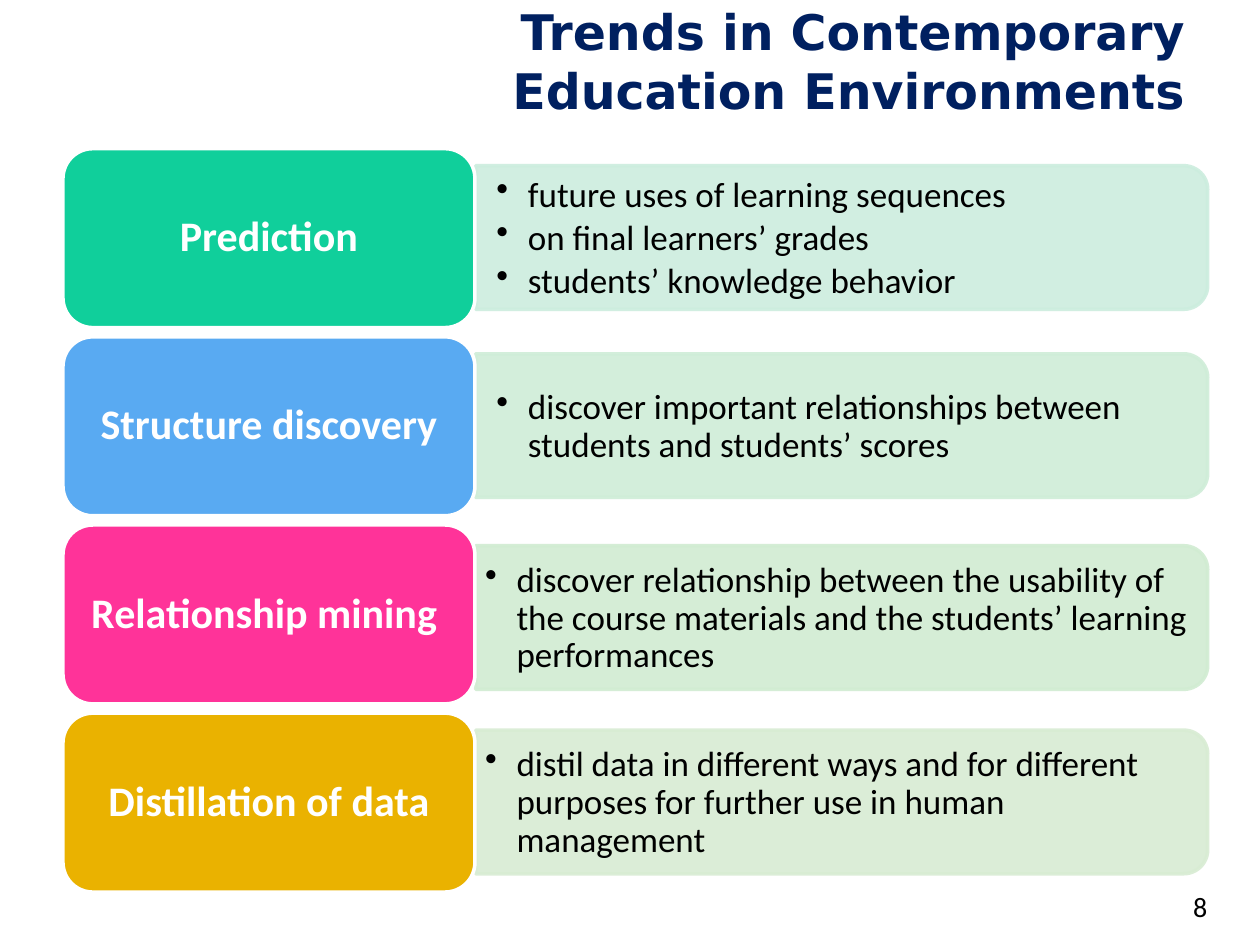
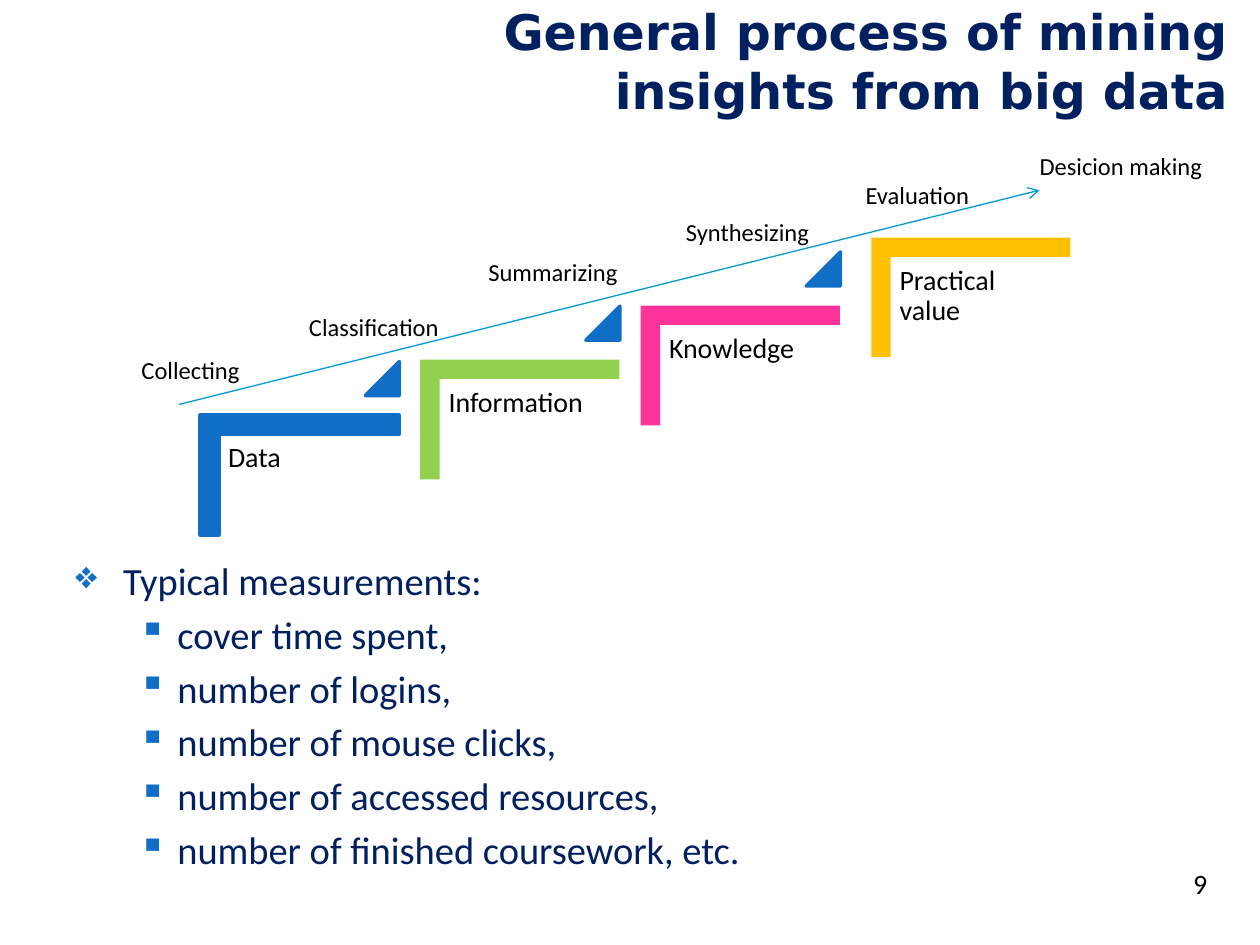
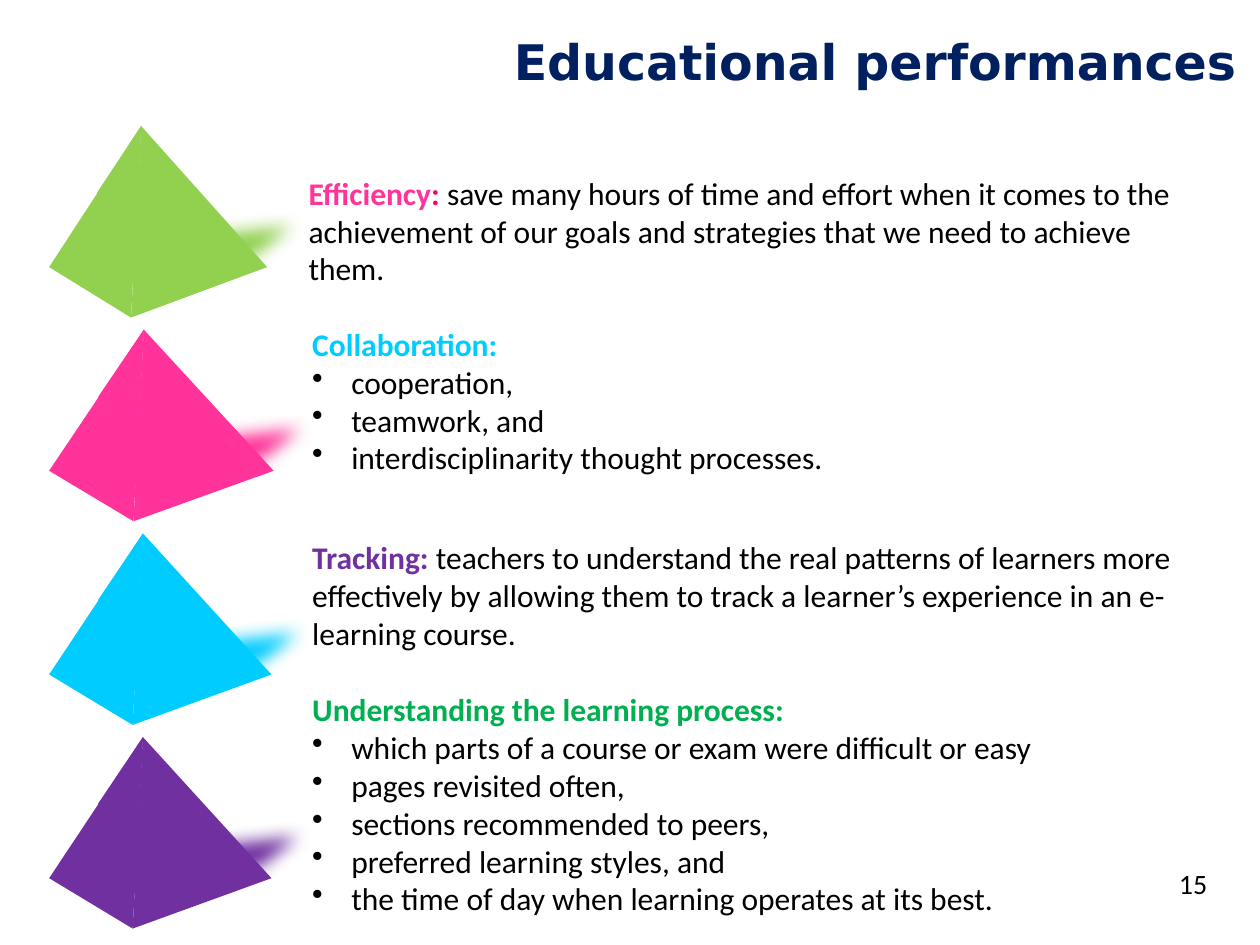
from pptx import Presentation
from pptx import util as u
from pptx.dml.color import RGBColor
from pptx.enum import shapes, text
from pptx.oxml import ns, xmlchemy

NAVY = RGBColor(0x00, 0x20, 0x60)
BLACK = RGBColor(0x00, 0x00, 0x00)
WHITE = RGBColor(0xFF, 0xFF, 0xFF)
BLUE = RGBColor(0x0F, 0x6F, 0xC6)
ROUTE = RGBColor(0x00, 0x9A, 0xD4)
MINT = RGBColor(0x10, 0xCF, 0x9B)
SKY = RGBColor(0x59, 0xAA, 0xF2)
PINK = RGBColor(0xFF, 0x33, 0x99)
ROSE = RGBColor(0xFF, 0x00, 0x66)
OCHRE = RGBColor(0xEA, 0xB2, 0x00)
AMBER = RGBColor(0xFF, 0xC0, 0x00)
LIME = RGBColor(0x92, 0xD0, 0x50)
CYAN = RGBColor(0x00, 0xCC, 0xFF)
VIOLET = RGBColor(0x70, 0x30, 0xA0)
GREEN = RGBColor(0x00, 0xB0, 0x50)
PALE = [RGBColor(0xCC, 0xED, 0xDE), RGBColor(0xCF, 0xED, 0xD8),
        RGBColor(0xD1, 0xEC, 0xD2), RGBColor(0xD8, 0xEC, 0xD3)]
BODY, HEAD = "Calibri", "DejaVu Sans"
LEFT, MID, RIGHT = text.PP_ALIGN.LEFT, text.PP_ALIGN.CENTER, text.PP_ALIGN.RIGHT
KIND = shapes.MSO_SHAPE

TRENDS = [
    ("Prediction", MINT, 0, (0.17, 0.08),
     ["future uses of learning sequences", "on final learners’ grades",
      "students’ knowledge behavior"]),
    ("Structure discovery", SKY, 0, (0.17, 0.08),
     ["discover important relationships between students and students’ scores"]),
    ("Relationship mining ", PINK, 0.03, (0.08, 0.04),
     ["discover relationship between the usability of the course materials "
      "and the students’ learning performances"]),
    ("Distillation of data", OCHRE, 0, (0.08, 0.04),
     ["distil data in different ways and for different purposes for further "
      "use in human management"]),
]

STEPS = [("Data", BLUE, 1.9, 2.98), ("Information", LIME, 3.65, 2.54),
         ("Knowledge", PINK, 5.4, 2.11), ("Practical value", AMBER, 7.23, 1.57)]
STAGES = [("Collecting", 1.01, 2.77, 0.99), ("Classification", 2.33, 2.43, 1.25),
          ("Summarizing", 3.77, 1.99, 1.23), ("Synthesizing", 5.33, 1.67, 1.19),
          ("Evaluation", 6.75, 1.38, 1.04), ("Desicion making", 8.14, 1.15, 1.5)]
MEASURES = ["cover time spent,", "number of logins,", "number of mouse clicks,",
            "number of accessed resources,", "number of finished coursework, etc."]

PYRAMIDS = [(LIME, 1), (PINK, 1.03), (CYAN, 1.02), (VIOLET, 1.02)]
SHADE = [(2.49, 0.58), (1.77, 1.17), (0.94, 1.3), (0.5, 0.79)]
FACES = [
    [(0.73, 0), (0.65, 1.52), (0, 1.12)],
    [(0.73, 0), (1.73, 1.12), (0.65, 1.52)],
    [(0.73, 0), (0.67, 1.28), (0.62, 0.96), (0.52, 0.72), (0.38, 0.53)],
]
GAINS = [
    ((2.35, 1.33, 7.21, 1.01),
     [("Efficiency", PINK, True), (": ", ROSE, True),
      ("save many hours of time and effort when it comes to the achievement of "
       "our goals and strategies that we need to achieve them.", BLACK, False)], []),
    ((2.38, 2.53, 7.33, 1.31), [("Collaboration:", CYAN, True)],
     ["cooperation,", "teamwork, and", "interdisciplinarity thought processes."]),
    ((2.38, 4.22, 7.43, 1.01),
     [("Tracking: ", VIOLET, True),
      ("teachers to understand the real patterns of learners more effectively by "
       "allowing them to track a learner’s experience in an e-learning course.",
       BLACK, False)], []),
    ((2.38, 5.43, 7.43, 1.92), [("Understanding the learning process:", GREEN, True)],
     ["which parts of a course or exam were difficult or easy",
      "pages revisited often,", "sections recommended to peers,",
      "preferred learning styles, and",
      "the time of day when learning operates at its best."]),
]


def inch(nums):
    return [u.Inches(n) for n in nums]


def child(node, tag, **attrs):
    new = xmlchemy.OxmlElement(tag)
    for key, value in attrs.items():
        new.set(key, str(value))
    node.append(new)
    return new


def write(par, words, size, color=BLACK, bold=False, font=BODY):
    run = par.add_run()
    run.text = words
    run.font.name, run.font.size, run.font.bold = font, u.Pt(size), bold
    run.font.color.rgb = color


def line(frame, align=LEFT):
    first = frame.paragraphs[0]
    par = frame.add_paragraph() if first.runs else first
    par.alignment = align
    return par


def bullet(par, mark, edge, hang, color=None):
    props = par._p.get_or_add_pPr()
    props.set("marL", str(u.Inches(edge)))
    props.set("indent", str(-u.Inches(hang)))
    if color is not None:
        child(child(props, "a:buClr"), "a:srgbClr", val=color)
    child(props, "a:buChar", char=mark)


def inset(frame, across, down):
    frame.margin_left = frame.margin_right = u.Inches(across)
    frame.margin_top = frame.margin_bottom = u.Inches(down)


def box(slide, at, wrap=True):
    frame = slide.shapes.add_textbox(*inch(at)).text_frame
    frame.word_wrap = wrap
    return frame


def label(slide, at, words, size):
    write(line(box(slide, at, False), RIGHT), words, size)


def paint(shape, color, edge=None):
    shape.shadow.inherit = False
    shape.fill.solid()
    shape.fill.fore_color.rgb = color
    if edge is None:
        shape.line.fill.background()
    else:
        shape.line.color.rgb = edge
        shape.line.width = u.Pt(2)
    return shape


def form(slide, kind, at, color, edge=None):
    return paint(slide.shapes.add_shape(kind, *inch(at)), color, edge)


def corner(slide, at, color, edge):
    shape = form(slide, KIND.RECTANGLE, at, color, edge)
    geom = shape._element.spPr.find(ns.qn("a:prstGeom"))
    geom.set("prst", "corner")
    guides = geom.find(ns.qn("a:avLst"))
    for name in ("adj1", "adj2"):
        child(guides, "a:gd", name=name, fmla="val 16100")
    shape.rotation = 90


def outline(slide, points, color):
    start, *rest = [inch(p) for p in points]
    pen = slide.shapes.build_freeform(*start)
    pen.add_line_segments(rest, close=True)
    return paint(pen.convert_to_shape(), color)


def begin(deck, words, left, width, page, at):
    slide = deck.slides.add_slide(deck.slide_layouts[5])
    title = slide.shapes.title
    title.left, title.top, title.width, title.height = inch((left, 0.17, width, 0.62))
    frame = title.text_frame
    frame.auto_size = text.MSO_AUTO_SIZE.NONE
    frame.vertical_anchor = text.MSO_ANCHOR.MIDDLE
    write(line(frame, RIGHT), words, 28, NAVY, True, HEAD)
    label(slide, at, page, 16)
    return slide


def trends(deck):
    slide = begin(deck, "Trends in Contemporary Education Environments",
                  2.08, 7.42, "8", (9.36, 7.01, 0.32, 0.37))
    for i, (name, color, shift, pad, notes) in enumerate(TRENDS):
        top = 1.18 + i * 4.48 / 3
        mid = top + 0.71 + shift
        panel = form(slide, KIND.ROUND_2_SAME_RECTANGLE,
                     (6.11, mid - 2.91, 1.14, 5.81), PALE[i], PALE[i])
        panel.rotation = 90
        for tint in panel._element.spPr.iter(ns.qn("a:srgbClr")):
            child(tint, "a:alpha", val=90000)
        frame = box(slide, (3.77, mid - 0.51, 5.76, 1.03))
        frame.vertical_anchor = text.MSO_ANCHOR.MIDDLE
        inset(frame, *pad)
        for note in notes:
            par = line(frame)
            bullet(par, "•", 0.25, 0.25)
            par.line_spacing, par.space_after = 0.9, u.Pt(3)
            write(par, note, 20)
        tile = form(slide, KIND.ROUNDED_RECTANGLE, (0.5, top, 3.27, 1.42), color, WHITE)
        frame = tile.text_frame
        frame.word_wrap = True
        frame.vertical_anchor = text.MSO_ANCHOR.MIDDLE
        inset(frame, 0.1, 0.05)
        par = line(frame, MID)
        par.line_spacing = 0.9
        write(par, name, 24, WHITE, True)


def process(deck):
    slide = begin(deck, "General process of mining insights from big data",
                  3.42, 6.42, "9", (9.36, 6.83, 0.32, 0.37))
    frame = box(slide, (0.5, 4.37, 9, 2.7))
    par = line(frame)
    bullet(par, "❖", 0.38, 0.38, BLUE)
    write(par, "Typical measurements:", 22, NAVY)
    for item in MEASURES:
        par = line(frame)
        bullet(par, "▪", 0.81, 0.31, BLUE)
        par.space_before = u.Pt(4.4)
        write(par, item, 22, NAVY)
    for name, color, left, top in STEPS:
        corner(slide, (left, top, 0.95, 1.58), color, BLUE if color == BLUE else None)
        frame = box(slide, (left - 0.16, top + 0.47, 1.4, 1.25))
        inset(frame, 0.07, 0.07)
        par = line(frame)
        par.line_spacing = 0.9
        write(par, name, 16)
        if name != STEPS[-1][0]:
            wedge = form(slide, KIND.ISOSCELES_TRIANGLE,
                         (left + 1, top - 0.11, 0.27, 0.27), BLUE, BLUE)
            wedge.adjustments[0] = 1
    route = slide.shapes.add_connector(shapes.MSO_CONNECTOR.STRAIGHT,
                                       *inch((1.42, 3.21, 8.25, 1.51)))
    route.line.color.rgb = ROUTE
    route.line.width = u.Pt(0.75)
    child(route.line._get_or_add_ln(), "a:tailEnd", type="arrow")
    child(route._element.spPr, "a:effectLst")
    for name, left, top, width in STAGES:
        label(slide, (left, top, width, 0.34), name, 14)


def gains(deck):
    slide = begin(deck, "Educational performances",
                  0.91, 9, "15", (9.25, 6.83, 0.43, 0.37))
    for i, (color, wide) in enumerate(PYRAMIDS):
        def place(points):
            return [(0.39 + x * wide, 1 + i * 4.85 / 3 + y) for x, y in points]
        shade = outline(slide, place(SHADE), color)
        glow = shade._element.spPr.find(ns.qn("a:effectLst"))
        child(glow, "a:softEdge", rad=u.Inches(0.14))
        for face in FACES:
            outline(slide, place(face), color)
    for at, runs, items in GAINS:
        frame = box(slide, at)
        par = line(frame)
        for words, color, bold in runs:
            write(par, words, 18, color, bold)
        for item in items:
            par = line(frame)
            bullet(par, "•", 0.31, 0.31)
            write(par, item, 18)


def main():
    deck = Presentation()
    deck.slide_width, deck.slide_height = inch((10, 7.5))
    trends(deck)
    process(deck)
    gains(deck)
    deck.save("out.pptx")


if __name__ == "__main__":
    main()
